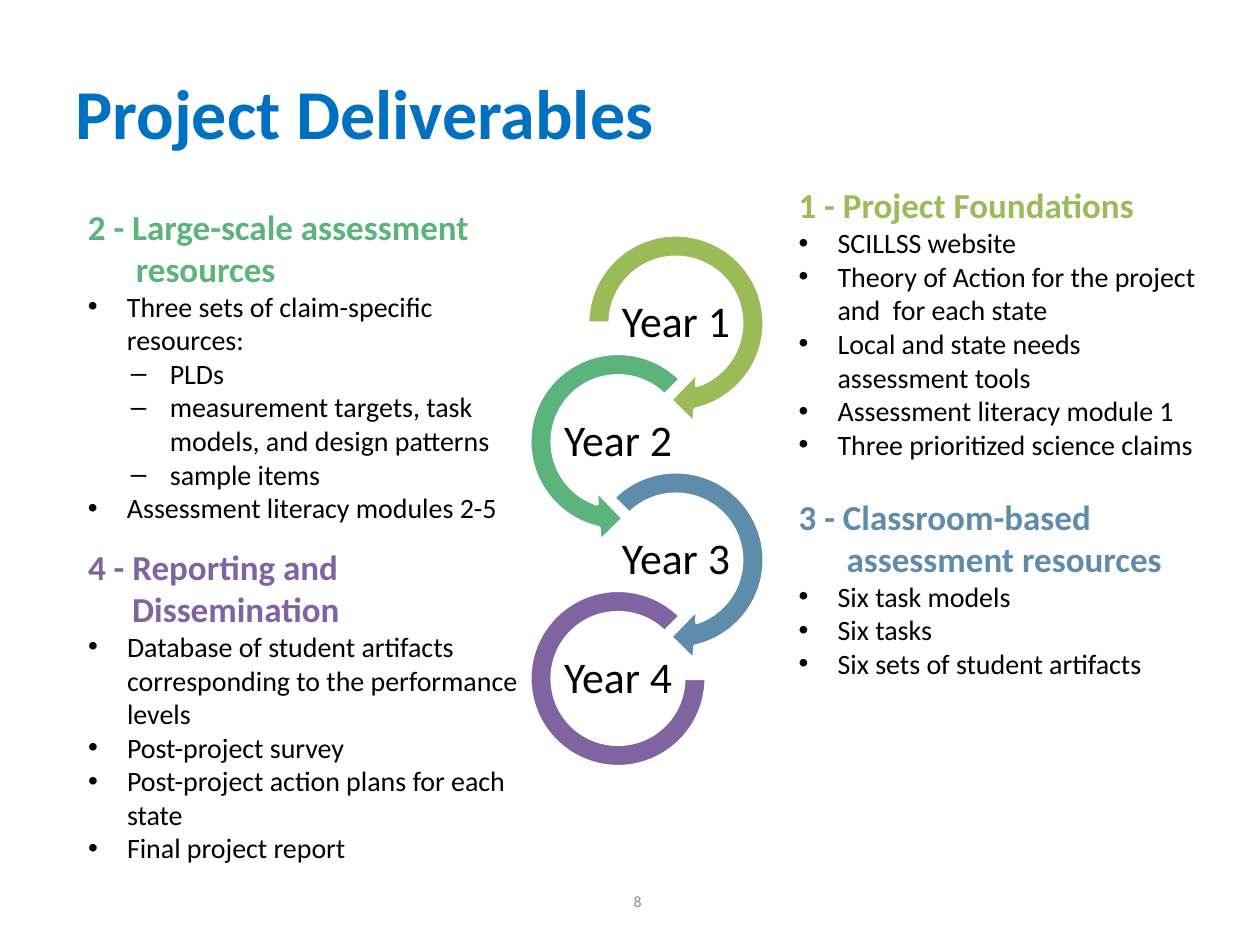
import pptx
import pptx.util
import pptx.dml.color
import pptx.enum.shapes
import pptx.enum.text
import pptx.oxml.ns
import lxml.etree

Inches = pptx.util.Inches
SHAPE = pptx.enum.shapes.MSO_SHAPE
ALIGN = pptx.enum.text.PP_ALIGN
ANCHOR = pptx.enum.text.MSO_ANCHOR
AUTO = pptx.enum.text.MSO_AUTO_SIZE

COLORS = {
    "title": "0070C0", "text": "000000", "number": "8C8C8C", "outline": "FFFFFF",
    "year1": "9BBB59", "year2": "5CB37C", "year3": "608CAB", "year4": "8064A2",
}

YEARS = [
    ("Year 1", "year1", SHAPE.CIRCULAR_ARROW, (0.11, 11.423, 45, 108, 0.125)),
    ("Year 2", "year2", SHAPE.LEFT_CIRCULAR_ARROW, (0.11, 11.423, 63, 189, 0.125)),
    ("Year 3", "year3", SHAPE.CIRCULAR_ARROW, (0.11, 11.423, 45, 135, 0.125)),
    ("Year 4", "year4", SHAPE.BLOCK_ARC, (0, 189, 0.127)),
]
RING_LEFTS = (4.55, 4.09)
RING_TOP, RING_STEP = 1.75, 0.94
RING_SIZE, ARC_SIZE = 1.63, 1.4
LABEL_DX, LABEL_DY, LABEL_W, LABEL_H = 0.36, 0.59, 0.91, 0.46

BULLETS = [("•", 0.31), ("–", 0.65)]
HANG = 0.31

DELIVERABLES = [
    ("1 - Project Foundations", "year1", (6.24, 1.41, 3.5, 2.56), 0, [
        (0, "SCILLSS website"),
        (0, "Theory of Action for the project and  for each state"),
        (0, "Local and state needs assessment tools"),
        (0, "Assessment literacy module 1"),
        (0, "Three prioritized science claims"),
    ]),
    ("2 - Large-scale assessment resources", "year2", (0.6, 1.58, 3.5, 2.66), 0.38, [
        (0, "Three sets of claim-specific resources:"),
        (1, "PLDs"),
        (1, "measurement targets, task models, and design patterns"),
        (1, "sample items"),
        (0, "Assessment literacy modules 2-5"),
    ]),
    ("3 - Classroom-based assessment resources", "year3", (6.24, 3.88, 3.51, 1.58), 0.38, [
        (0, "Six task models"),
        (0, "Six tasks"),
        (0, "Six sets of student artifacts"),
    ]),
    ("4 - Reporting and Dissemination", "year4", (0.6, 4.28, 3.82, 2.66), 0.35, [
        (0, "Database of student artifacts corresponding to the performance levels"),
        (0, "Post-project survey"),
        (0, "Post-project action plans for each state"),
        (0, "Final project report"),
    ]),
]


def rgb(name):
    return pptx.dml.color.RGBColor.from_string(COLORS[name])


def add_box(slide, box, anchor=ANCHOR.TOP, inset=None, auto=AUTO.NONE):
    tf = slide.shapes.add_textbox(*map(Inches, box)).text_frame
    tf.word_wrap = True
    tf.auto_size = auto
    tf.vertical_anchor = anchor
    if inset is not None:
        tf.margin_left = tf.margin_right = Inches(inset)
        tf.margin_top = tf.margin_bottom = Inches(inset)
    return tf


def add_text(tf, text, size=16, color="text", bold=False, align=ALIGN.LEFT,
             spacing=None, left=0, hang=0, bullet=None, level=0):
    p = tf.add_paragraph() if tf.paragraphs[0].runs else tf.paragraphs[0]
    p.alignment = align
    p.level = level
    if spacing:
        p.line_spacing = spacing
    if hang:
        pPr = p._p.get_or_add_pPr()
        pPr.set("marL", str(Inches(left)))
        pPr.set("indent", str(-Inches(hang)))
        if bullet:
            qn = pptx.oxml.ns.qn
            lxml.etree.SubElement(pPr, qn("a:buFont")).set("typeface", "Arial")
            lxml.etree.SubElement(pPr, qn("a:buChar")).set("char", bullet)
    r = p.add_run()
    r.text = text
    r.font.name = "Calibri"
    r.font.size = pptx.util.Pt(size)
    r.font.bold = bold
    r.font.color.rgb = rgb(color)


def add_year(slide, index, label, color, kind, adjustments):
    left = RING_LEFTS[index % 2]
    top = RING_TOP + index * RING_STEP
    size = ARC_SIZE if kind == SHAPE.BLOCK_ARC else RING_SIZE
    inset = (RING_SIZE - size) / 2
    sp = slide.shapes.add_shape(
        kind, *map(Inches, (left + inset, top + inset, size, size)))
    for i, value in enumerate(adjustments):
        sp.adjustments[i] = value
    sp.shadow.inherit = False
    sp.fill.solid()
    sp.fill.fore_color.rgb = rgb(color)
    sp.line.color.rgb = rgb("outline")
    sp.line.width = pptx.util.Pt(2)
    tf = add_box(slide, (left + LABEL_DX, top + LABEL_DY, LABEL_W, LABEL_H),
                 anchor=ANCHOR.MIDDLE, inset=0.02)
    add_text(tf, label, size=25, align=ALIGN.CENTER, spacing=0.9)


def add_deliverable(slide, heading, color, box, hang, items):
    tf = add_box(slide, box, auto=AUTO.SHAPE_TO_FIT_TEXT)
    add_text(tf, heading, size=20, color=color, bold=True, left=hang, hang=hang)
    for level, text in items:
        bullet, left = BULLETS[level]
        add_text(tf, text, left=left, hang=HANG, bullet=bullet, level=level)


def main():
    prs = pptx.Presentation()
    prs.slide_width, prs.slide_height = Inches(10), Inches(7.5)
    slide = prs.slides.add_slide(prs.slide_layouts[6])
    tf = add_box(slide, (2.94, 6.95, 2.25, 0.4), anchor=ANCHOR.MIDDLE)
    add_text(tf, "8", size=9, color="number", align=ALIGN.RIGHT)
    tf = add_box(slide, (0.5, 0.3, 9, 1.25), anchor=ANCHOR.MIDDLE)
    add_text(tf, "Project Deliverables", size=40, color="title", bold=True, spacing=0.9)
    for index, year in enumerate(YEARS):
        add_year(slide, index, *year)
    for deliverable in DELIVERABLES:
        add_deliverable(slide, *deliverable)
    prs.save("out.pptx")


if __name__ == "__main__":
    main()
